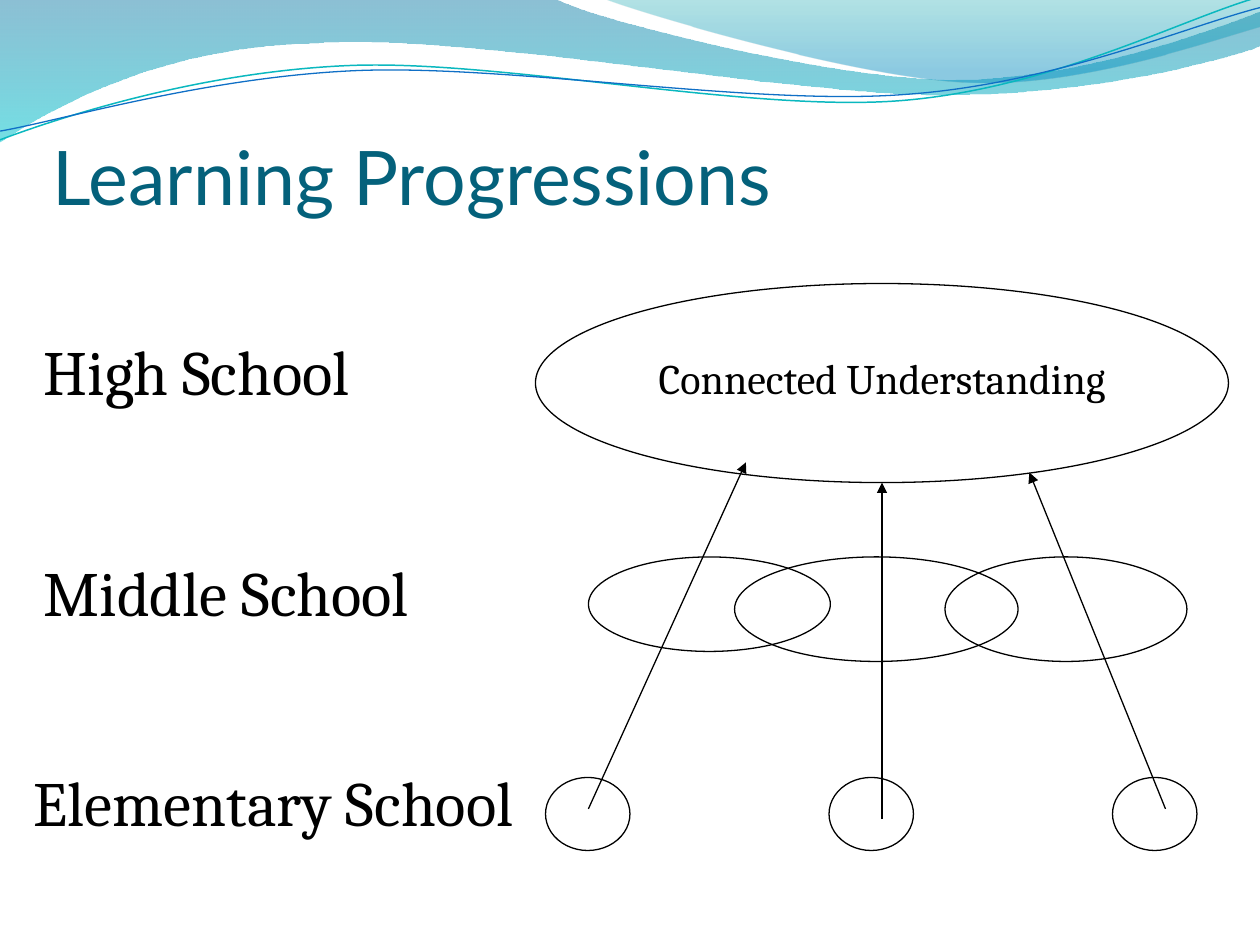
from math import cos, radians, sin

from lxml import etree
from pptx import Presentation
from pptx.dml.color import RGBColor
from pptx.enum.shapes import MSO_CONNECTOR, MSO_SHAPE
from pptx.enum.text import MSO_ANCHOR, MSO_AUTO_SIZE, PP_ALIGN
from pptx.oxml.ns import qn
from pptx.util import Pt

PX = 9144  # EMU per px, 100 px to the inch
ELLIPSE = MSO_SHAPE.OVAL
STRAIGHT = MSO_CONNECTOR.STRAIGHT
LEFT, CENTER = PP_ALIGN.LEFT, PP_ALIGN.CENTER
TOP, BOTTOM = MSO_ANCHOR.TOP, MSO_ANCHOR.BOTTOM
FIT_SHAPE, FIXED_SIZE = MSO_AUTO_SIZE.SHAPE_TO_FIT_TEXT, MSO_AUTO_SIZE.NONE
BLACK = "000000"

# Path pieces: two numbers are a straight line, six a Bezier curve.
# Gradient stops: position in percent, colour, opacity in percent.
WAVES = [
    ([(0, 0), (440, -1), (476, 17, 664, 63, 758, 63), (853, 63, 958, 26, 1000, 9),
      (1001, 36), (983, 44, 870, 76, 746, 75), (622, 75, 382, 28, 257, 34),
      (129, 36, 46, 83, -1, 113)],
     [(0, "0074A1", 45), (100, "00C6CF", 55)]),
    ([(479, -1), (509, 11, 682, 62, 769, 65), (856, 69, 961, 32, 1000, 21), (1000, 0)],
     [(0, "00A1A9", 30), (80, "008BBF", 45)]),
]
WAVE_TILT = 357.3
# Wave lines: path as it lies when tilted, centre of the tilt, colour, width.
WAVE_LINES = [
    ([(0, 111), (48, 93, 158, 57, 277, 52), (395, 47, 593, 89, 713, 80),
      (833, 71, 938, 15, 998, -2)], (499, 57), "0AB8BF", 0.85),
    ([(0, 104), (47, 96, 164, 61, 283, 56), (403, 51, 597, 84, 717, 75),
      (836, 67, 941, 21, 1000, 6)], (499, 59), "0F6FC6", 0.75),
]
TITLE = ("Learning Progressions", (42, 50, 958, 125))
LEVELS = [
    ("High School", (25, 259, 288, 71)),
    ("Middle School", (25, 434, 335, 71)),
    ("Elementary School", (17, 601, 430, 71)),
]
GOAL = ("Connected Understanding", (475, 275, 450, 51))
GOAL_ELLIPSE = (425, 225, 550, 158)
ELEMENTARY_ELLIPSES = [(433 + 225 * column, 617, 67, 58) for column in (1, 2, 0)]
OUTER_MIDDLE_ELLIPSES = [(467, 442, 192, 75), (750, 442, 192, 83)]
CENTRAL_MIDDLE_ELLIPSE = (583, 442, 225, 83)
ARROWS = [(467, 642, 592, 367), (925, 642, 817, 375), (700, 650, 700, 383)]


def emu(lengths):
    return [round(length * PX) for length in lengths]


def color(hex_string):
    return RGBColor.from_string(hex_string)


def points_of(piece):
    return list(zip(piece[::2], piece[1::2]))


def untilt(pieces, center):
    """Turn a path back by WAVE_TILT about the centre."""
    angle = radians(-WAVE_TILT)
    center_x, center_y = center

    def turn(x, y):
        across, down = x - center_x, y - center_y
        return (center_x + across * cos(angle) - down * sin(angle),
                center_y + across * sin(angle) + down * cos(angle))

    return [sum((turn(*point) for point in points_of(piece)), ()) for piece in pieces]


def set_line(shape, hex_string=BLACK, width=0.75):
    shape.line.color.rgb = color(hex_string)
    shape.line.width = Pt(width)


def add_path(shapes, pieces, close):
    """Draw all points as lines, then merge each three of a curve into one Bezier."""
    start, *points = [emu(point) for piece in pieces for point in points_of(piece)]
    builder = shapes.build_freeform(*start, scale=1.0)
    builder.add_line_segments(points, close=close)
    shape = builder.convert_to_shape()
    shape.shadow.inherit = False
    segments = iter(list(shape._element.iter(qn("a:lnTo"))))
    for piece in pieces[1:]:
        first = next(segments)
        if len(piece) == 6:
            first.tag = qn("a:cubicBezTo")
            for _ in range(2):
                extra = next(segments)
                first.append(extra[0])
                extra.getparent().remove(extra)
    return shape


def add_wave(shapes, pieces, stops):
    shape = add_path(shapes, pieces, close=True)
    shape.line.fill.background()
    shape.fill.gradient()
    shape.fill.gradient_angle = 270
    for stop, (position, hex_string, _) in zip(shape.fill.gradient_stops, stops):
        stop.position = position / 100
        stop.color.rgb = color(hex_string)
    colors = shape._element.spPr.iter(qn("a:srgbClr"))
    for element, (_, _, opacity) in zip(colors, stops):
        etree.SubElement(element, qn("a:alpha"), val=str(opacity * 1000))


def add_wave_line(shapes, pieces, center, hex_string, width):
    shape = add_path(shapes, untilt(pieces, center), close=False)
    shape.rotation = WAVE_TILT
    shape.fill.background()
    set_line(shape, hex_string, width)


def add_text(shapes, text, box, size=36, font="Cambria", hex_string=BLACK, align=LEFT,
             anchor=TOP, wrap=False, insets=(10, 5, 10, 5), auto_size=FIT_SHAPE):
    frame = shapes.add_textbox(*emu(box)).text_frame
    frame.word_wrap = wrap
    frame.auto_size = auto_size
    frame.vertical_anchor = anchor
    (frame.margin_left, frame.margin_top,
     frame.margin_right, frame.margin_bottom) = emu(insets)
    paragraph = frame.paragraphs[0]
    paragraph.alignment = align
    run = paragraph.add_run()
    run.text = text
    run.font.size = Pt(size)
    run.font.name = font
    run.font.color.rgb = color(hex_string)


def add_ellipse(shapes, box):
    shape = shapes.add_shape(ELLIPSE, *emu(box))
    shape.shadow.inherit = False
    shape.fill.background()
    set_line(shape)


def add_arrow(shapes, ends):
    connector = shapes.add_connector(STRAIGHT, *emu(ends))
    set_line(connector)
    properties = connector._element.spPr
    etree.SubElement(properties.find(qn("a:ln")), qn("a:tailEnd"), type="triangle")
    etree.SubElement(properties, qn("a:effectLst"))


def main():
    presentation = Presentation()
    presentation.slide_width, presentation.slide_height = emu((1000, 750))
    slide = presentation.slides.add_slide(presentation.slide_layouts[6])

    for wave in WAVES:
        add_wave(slide.shapes, *wave)
    wave_lines = slide.shapes.add_group_shape().shapes
    for wave_line in WAVE_LINES:
        add_wave_line(wave_lines, *wave_line)

    add_text(slide.shapes, *TITLE, size=43, font="Lato", hex_string="04617B",
             anchor=BOTTOM, wrap=True, insets=(0, 5, 0, 0), auto_size=FIXED_SIZE)
    for level in LEVELS:
        add_text(slide.shapes, *level)

    diagram = slide.shapes.add_group_shape().shapes
    add_ellipse(diagram, GOAL_ELLIPSE)
    add_text(diagram, *GOAL, size=24, align=CENTER, wrap=True)
    for box in ELEMENTARY_ELLIPSES + OUTER_MIDDLE_ELLIPSES:
        add_ellipse(diagram, box)
    for ends in ARROWS:
        add_arrow(diagram, ends)
    add_ellipse(diagram, CENTRAL_MIDDLE_ELLIPSE)

    presentation.save("out.pptx")


if __name__ == "__main__":
    main()
